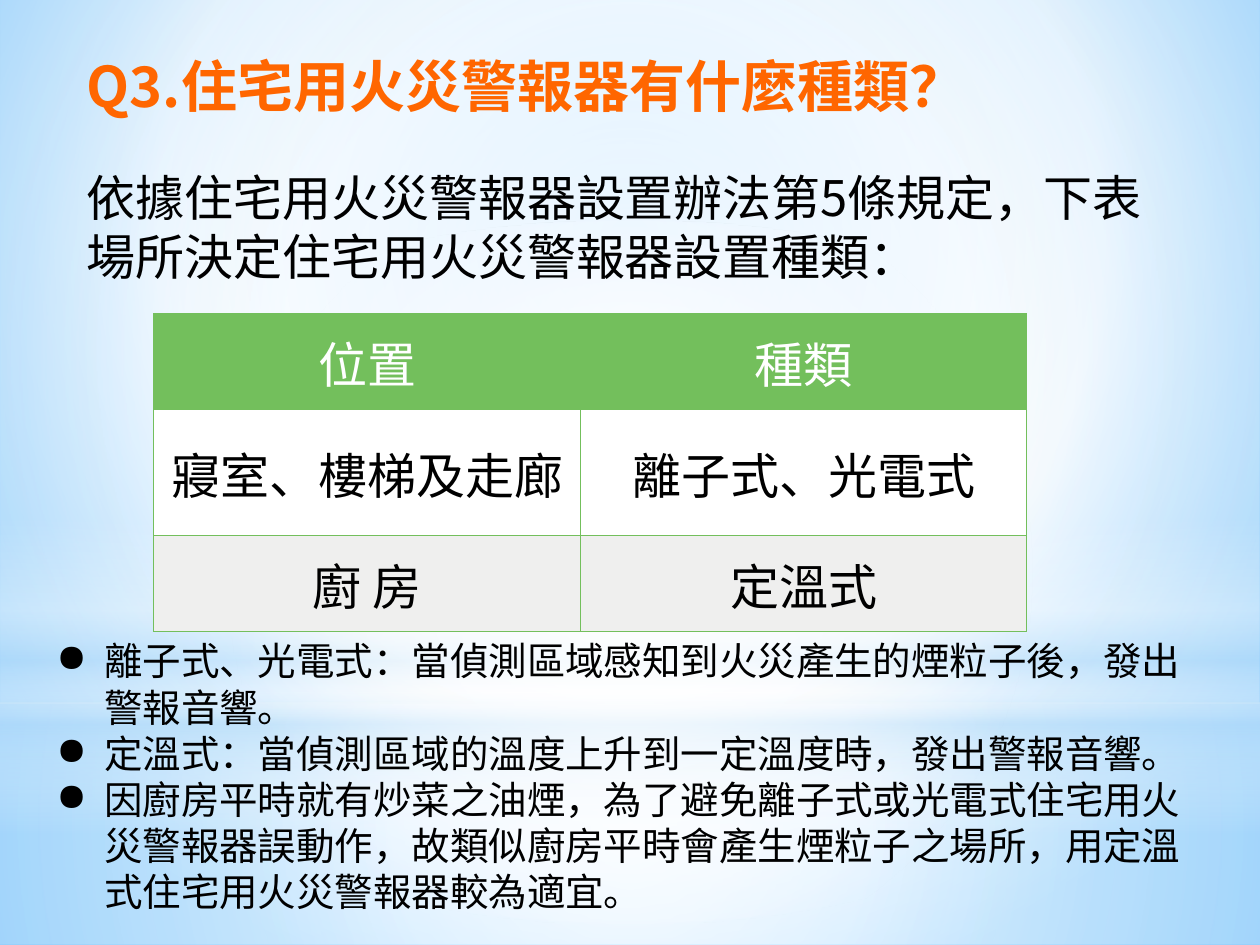
"""Build the slide on the types of home fire alarm."""
import pptx
import pptx.util
import pptx.dml.color
import pptx.enum.shapes
import pptx.enum.text
import pptx.oxml
import pptx.oxml.ns
from lxml import etree

RGB = pptx.dml.color.RGBColor
ORANGE = RGB(0xFF, 0x66, 0x00)
GREEN = RGB(0x73, 0xBF, 0x5C)
GREY = RGB(0xEF, 0xEF, 0xEE)
WHITE = RGB(0xFF, 0xFF, 0xFF)
BLACK = RGB(0, 0, 0)
PALE = RGB(0xB4, 0xDC, 0xFA)
SKY = RGB(0x9E, 0xD5, 0xFF)
BLUE = RGB(0x5B, 0xB9, 0xFF)

FONT = "Noto Sans CJK SC"
WIDE, HIGH = 10, 7.5
INCH, PT = pptx.util.Inches, pptx.util.Pt
QN = pptx.oxml.ns.qn
KIND = pptx.enum.shapes.MSO_SHAPE
ALIGN = pptx.enum.text.PP_ALIGN

TITLE = "Q3.住宅用火災警報器有什麼種類？"
INTRO = "依據住宅用火災警報器設置辦法第5條規定，下表場所決定住宅用火災警報器設置種類："
NOTES = [
    "離子式、光電式：當偵測區域感知到火災產生的煙粒子後，發出警報音響。",
    "定溫式：當偵測區域的溫度上升到一定溫度時，發出警報音響。",
    "因廚房平時就有炒菜之油煙，為了避免離子式或光電式住宅用火災警報器誤動作，"
    "故類似廚房平時會產生煙粒子之場所，用定溫式住宅用火災警報器較為適宜。",
]
ROWS = [("位置", "種類"), ("寢室、樓梯及走廊", "離子式、光電式"), ("廚 房", "定溫式")]
LOOKS = [(GREEN, WHITE), (WHITE, BLACK), (GREY, BLACK)]
COLS, TALLS = (3.39, 3.54), (0.66, 1, 0.66)

MID = (50, 50, 50, 50)
BACK = [(0, SKY, 100), (60, WHITE, 100), (100, BLUE, 100)]
LAYERS = [
    (KIND.RECTANGLE, 5.58, 1.92, [(0, WHITE, 91), (37, WHITE, 76), (100, PALE, 79)], MID),
    (KIND.RECTANGLE, 0, 5.58, [(0, WHITE, 89), (48, WHITE, 62), (100, PALE, 79)], MID),
    (KIND.RECTANGLE, 4.12, 2.5, [(0, WHITE, 0), (29, WHITE, 30), (45, PALE, 40),
                                 (55, WHITE, 26), (65, PALE, 60), (100, WHITE, 0)], None),
    (KIND.OVAL, 1.75, 5.58, [(0, WHITE, 100), (56, WHITE, 0)], MID),
]


def add_node(base, tag, **attrs):
    node = etree.SubElement(base, QN(tag))
    for key, val in attrs.items():
        node.set(key, str(val))
    return node


def set_grad(base, stops, focus):
    grad = pptx.oxml.parse_xml(f"<a:gradFill {pptx.oxml.ns.nsdecls('a')} rotWithShape='1'/>")
    group = add_node(grad, "a:gsLst")
    for pos, color, alpha in stops:
        stop = add_node(group, "a:gs", pos=pos * 1000)
        tint = add_node(stop, "a:srgbClr", val=color)
        if alpha < 100:
            add_node(tint, "a:alpha", val=alpha * 1000)
    if focus:
        route = add_node(grad, "a:path", path="circle")
        sides = {side: part * 1000 for side, part in zip("ltrb", focus)}
        add_node(route, "a:fillToRect", **sides)
    else:
        add_node(grad, "a:lin", ang=90 * 60000, scaled=0)
    base.replace(base.find(QN("a:solidFill")), grad)


def put_text(frame, lines, size=28, color=BLACK, bold=False, align=ALIGN.LEFT, bullet=None):
    for num, line in enumerate(lines):
        para = frame.add_paragraph() if num else frame.paragraphs[0]
        para.alignment = align
        run = para.add_run()
        run.text = line
        font = run.font
        font.size, font.bold, font.name = PT(size), bold, FONT
        font.color.rgb = color
        add_node(run._r.get_or_add_rPr(), "a:ea", typeface=FONT)
        if bullet:
            props = para._p.get_or_add_pPr()
            props.set("marL", str(INCH(0.38)))
            props.set("indent", str(-INCH(0.38)))
            add_node(props, "a:buChar", char=bullet)


def add_box(slide, place, lines, wrap=True, **look):
    frame = slide.shapes.add_textbox(*map(INCH, place)).text_frame
    frame.word_wrap = wrap
    frame.auto_size = pptx.enum.text.MSO_AUTO_SIZE.SHAPE_TO_FIT_TEXT
    put_text(frame, lines, **look)


def add_back(slide):
    slide.background.fill.solid()
    set_grad(slide._element.find(".//" + QN("p:bgPr")), BACK, (20, 10, 20, 60))
    for kind, top, tall, stops, focus in LAYERS:
        shape = slide.shapes.add_shape(kind, 0, INCH(top), INCH(WIDE), INCH(tall))
        shape.shadow.inherit = False
        shape.line.fill.background()
        shape.fill.solid()
        set_grad(shape._element.spPr, stops, focus)


def set_edges(cell):
    props = cell._tc.get_or_add_tcPr()
    for num, side in enumerate("LRTB"):
        edge = add_node(props, "a:ln" + side, w=PT(0.75))
        add_node(add_node(edge, "a:solidFill"), "a:srgbClr", val=GREEN)
        props.insert(num, edge)


def add_grid(slide):
    place = (1.22, 2.49, sum(COLS), sum(TALLS))
    table = slide.shapes.add_table(len(ROWS), len(COLS), *map(INCH, place)).table
    for col, width in zip(table.columns, COLS):
        col.width = INCH(width)
    for row, tall, words, (fill, ink) in zip(table.rows, TALLS, ROWS, LOOKS):
        row.height = INCH(tall)
        for cell, word in zip(row.cells, words):
            cell.fill.solid()
            cell.fill.fore_color.rgb = fill
            cell.vertical_anchor = pptx.enum.text.MSO_ANCHOR.MIDDLE
            cell.margin_left = cell.margin_right = INCH(0.1)
            cell.margin_top = cell.margin_bottom = INCH(0.1)
            put_text(cell.text_frame, [word], color=ink, align=ALIGN.CENTER)
            set_edges(cell)


def main():
    deck = pptx.Presentation()
    deck.slide_width, deck.slide_height = INCH(WIDE), INCH(HIGH)
    slide = deck.slides.add_slide(deck.slide_layouts[6])
    add_back(slide)
    add_grid(slide)
    add_box(slide, (0.59, 0.36, 7.16, 0.64), [TITLE], wrap=False,
            size=32, color=ORANGE, bold=True)
    add_box(slide, (0.59, 1.28, 8.71, 1.04), [INTRO])
    add_box(slide, (0.35, 5.01, 9.37, 2.32), NOTES, size=22, bullet="●")
    deck.save("out.pptx")


if __name__ == "__main__":
    main()
